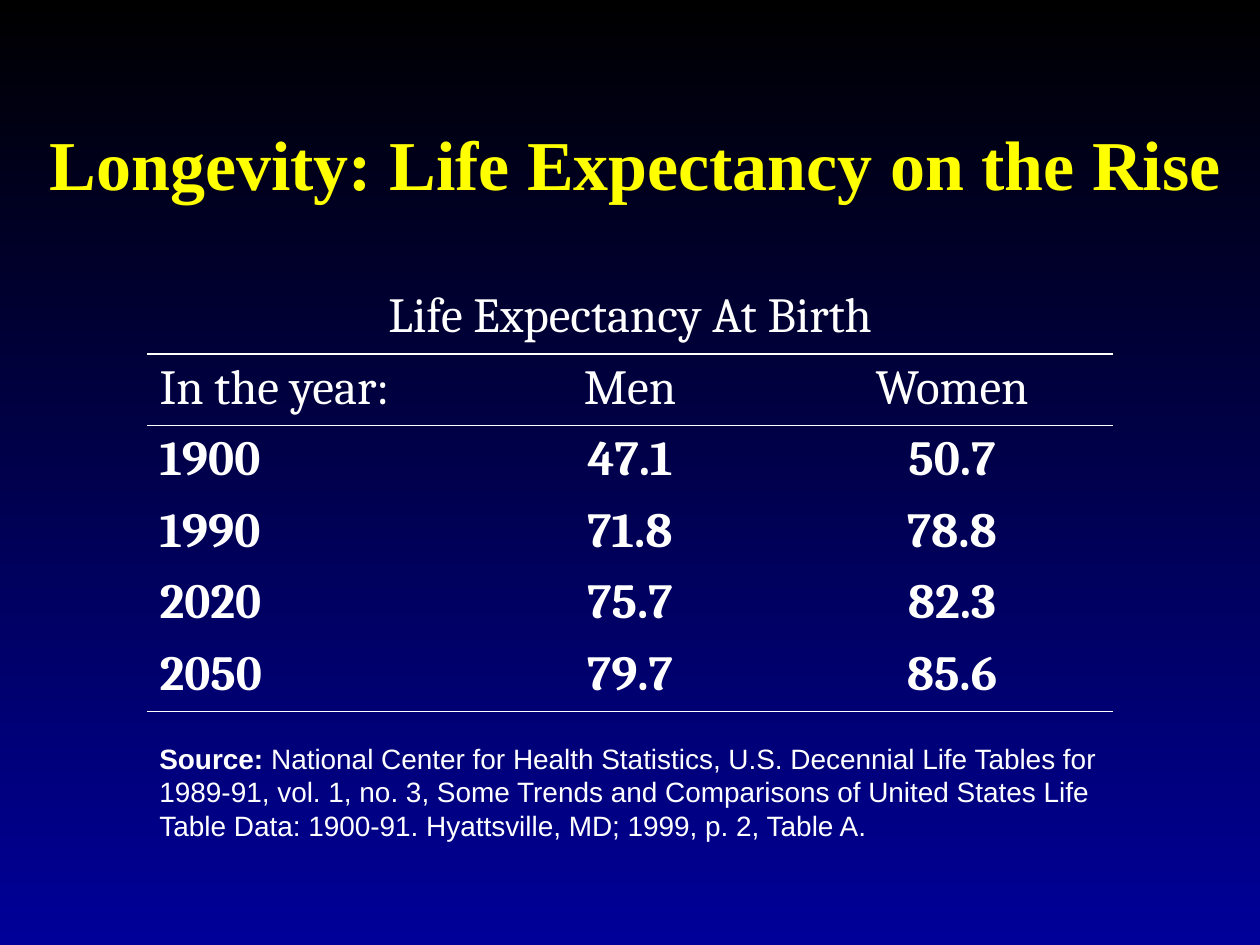
from pptx import Presentation
from pptx.dml.color import RGBColor
from pptx.enum.text import MSO_ANCHOR, PP_ALIGN
from pptx.oxml.ns import qn
from pptx.util import Inches, Pt
from lxml.etree import SubElement

WIDE, HIGH = Inches(10), Inches(7.5)
COLS, ROWS = 120, 90
WHITE, YELLOW = "FFFFFF", "FFFF00"
HEAD = "Life Expectancy At Birth"
DATA = [
    ("In the year:", "Men", "Women"),
    ("1900", "47.1", "50.7"),
    ("1990", "71.8", "78.8"),
    ("2020", "75.7", "82.3"),
    ("2050", "79.7", "85.6"),
]
SOURCE = (
    " National Center for Health Statistics, U.S. Decennial Life Tables for "
    "1989-91, vol. 1, no. 3, Some Trends and Comparisons of United States Life "
    "Table Data: 1900-91. Hyattsville, MD; 1999, p. 2, Table A."
)


def color(code):
    """Turn a hex string into a colour."""
    return RGBColor.from_string(code)


def grid(left, top, width, height):
    """Turn columns and rows of the grid into slide lengths."""
    col, row = WIDE / COLS, HIGH / ROWS
    return int(left * col), int(top * row), int(width * col), int(height * row)


def add_run(para, text, font, size, code=WHITE, bold=False):
    """Add one styled run to a paragraph."""
    run = para.add_run()
    run.text = text
    run.font.name = font
    run.font.size = Pt(size)
    run.font.bold = bold
    run.font.color.rgb = color(code)


def add_text(slide, box, anchor):
    """Add a wrapping text box and return its first paragraph."""
    frame = slide.shapes.add_textbox(*box).text_frame
    frame.word_wrap = True
    frame.vertical_anchor = anchor
    return frame.paragraphs[0]


def paint(slide):
    """Fill the background with a gradient from black down to blue."""
    fill = slide.background.fill
    fill.gradient()
    fill.gradient_angle = 270
    for stop, place, code in zip(fill.gradient_stops, (0, 1), ("000000", "000099")):
        stop.position = place
        stop.color.rgb = color(code)


def add_title(slide, box):
    """Place the title, centred in its box."""
    para = add_text(slide, box, MSO_ANCHOR.MIDDLE)
    para.alignment = PP_ALIGN.CENTER
    add_run(para, "Longevity: Life Expectancy on the Rise",
            "Times New Roman", 40, YELLOW, True)


def rule(cell, sides):
    """Draw white rules on the named sides of a cell and clear the rest."""
    props = cell._tc.get_or_add_tcPr()
    for side in "LRTB":
        line = SubElement(props, qn(f"a:ln{side}"), w=str(Pt(1)))
        if side in sides:
            solid = SubElement(line, qn("a:solidFill"))
            SubElement(solid, qn("a:srgbClr"), val=WHITE)
        else:
            SubElement(line, qn("a:noFill"))
    cell.fill.background()


def add_figures(slide, box):
    """Place the life table with rules around its header and at its foot."""
    rows = [(HEAD, "", "")] + DATA
    last = len(rows) - 1
    table = slide.shapes.add_table(len(rows), 3, *box).table
    table.first_row = table.horz_banding = False
    sides = {0: "B", 1: "TB", 2: "T", last: "B"}
    for r, row in enumerate(rows):
        for c, text in enumerate(row):
            cell = table.cell(r, c)
            rule(cell, sides.get(r, ""))
            if text:
                para = cell.text_frame.paragraphs[0]
                centred = c > 0 or r == 0
                para.alignment = PP_ALIGN.CENTER if centred else PP_ALIGN.LEFT
                add_run(para, text, "Cambria", 28, bold=r > 1)
    table.cell(0, 0).merge(table.cell(0, 2))


def add_source(slide, box):
    """Place the source note."""
    para = add_text(slide, box, MSO_ANCHOR.TOP)
    add_run(para, "Source:", "Arial", 16, bold=True)
    add_run(para, SOURCE, "Arial", 16)


def main():
    """Build the slide and save it."""
    deck = Presentation()
    deck.slide_width, deck.slide_height = WIDE, HIGH
    slide = deck.slides.add_slide(deck.slide_layouts[6])
    paint(slide)
    add_title(slide, grid(3, 8, 115, 15))
    add_figures(slide, grid(14, 26.9, 92, 40.8))
    add_source(slide, grid(14, 70, 93, 10.8))
    deck.save("out.pptx")


if __name__ == "__main__":
    main()
